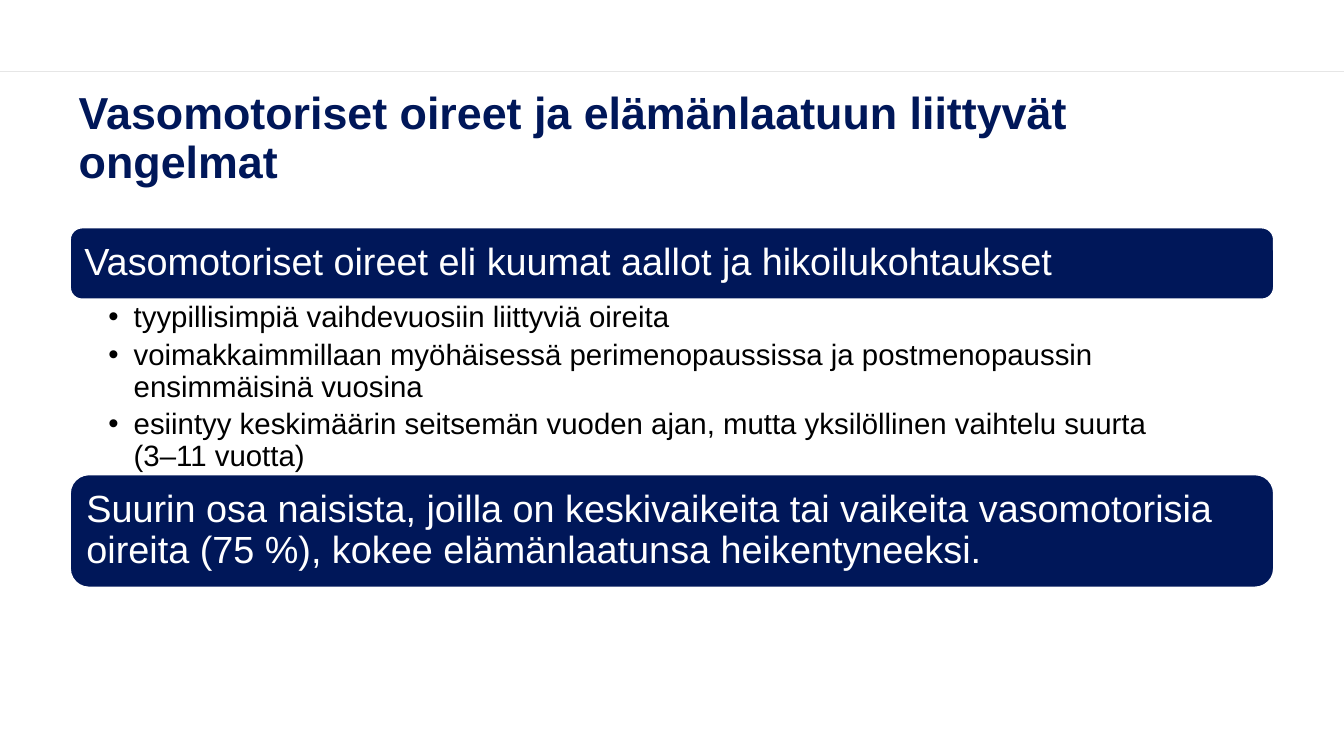
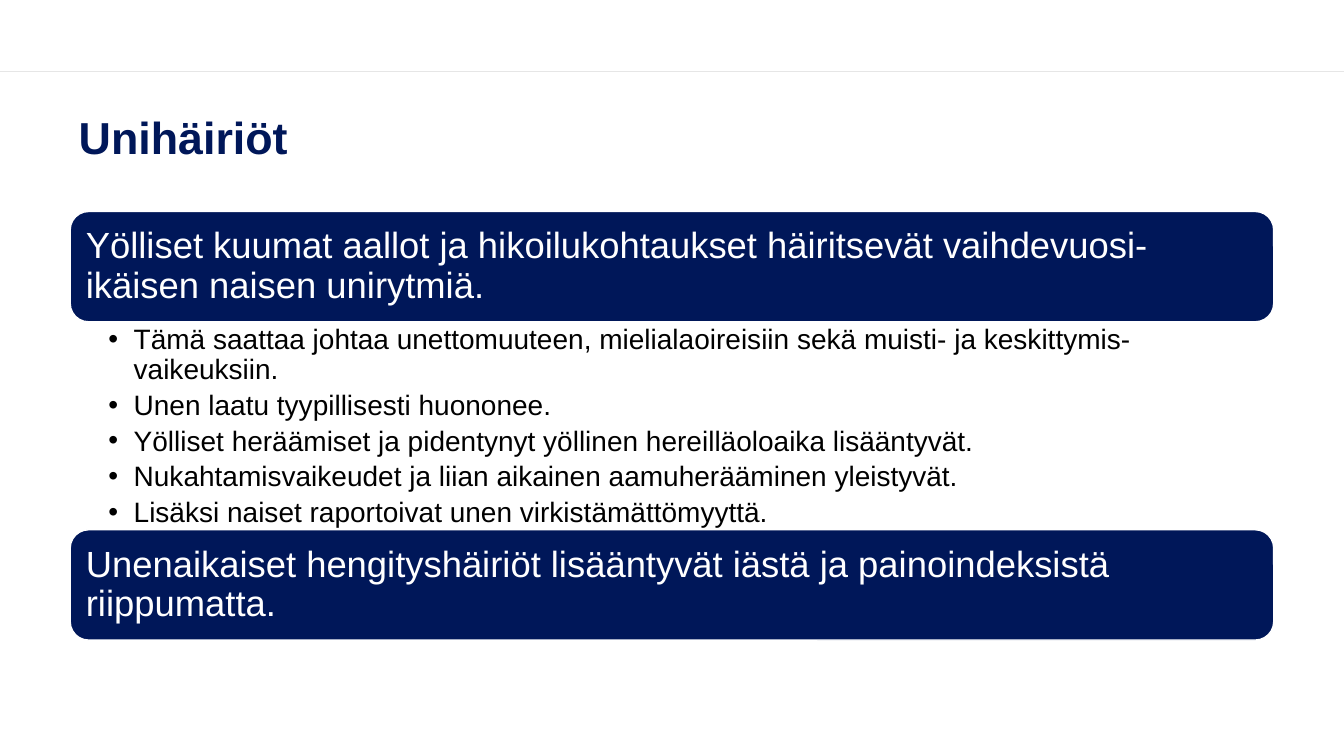
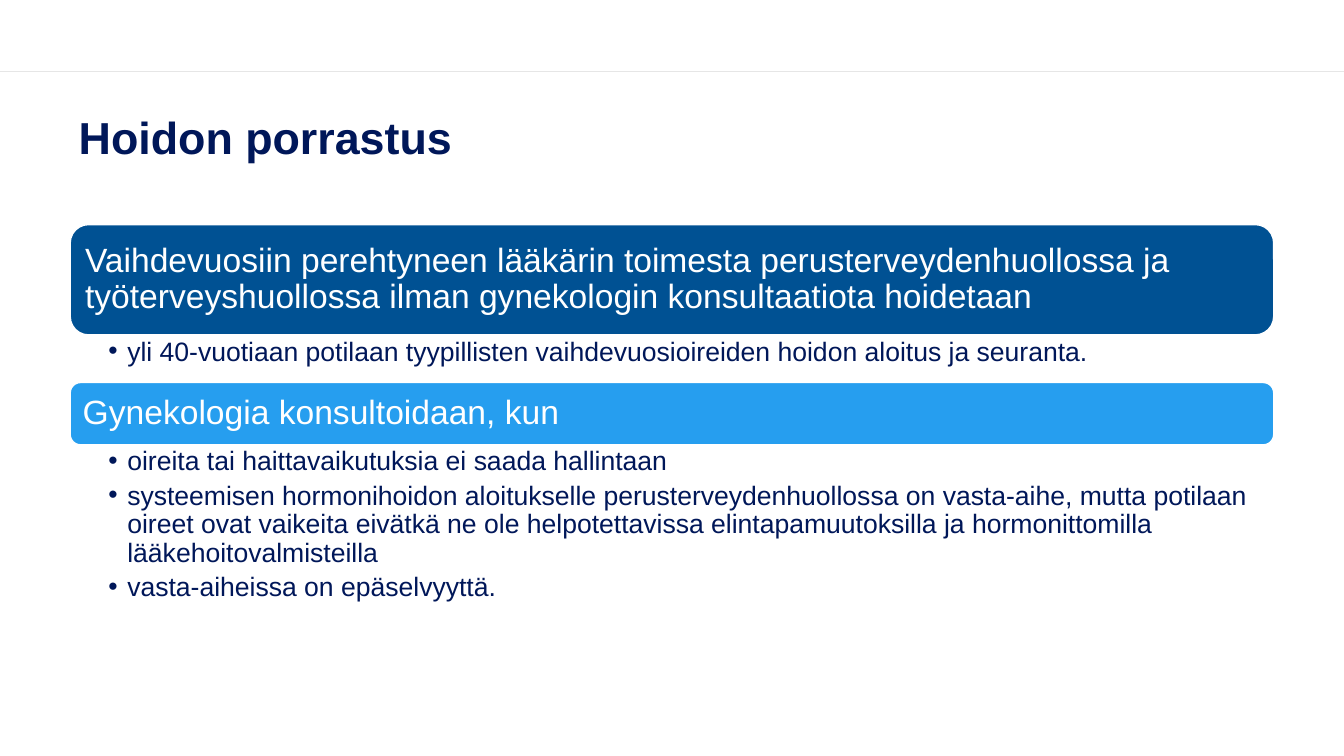
from dataclasses import dataclass

from lxml.etree import SubElement
from pptx import Presentation
from pptx.dml.color import RGBColor as RGB
from pptx.enum.shapes import MSO_CONNECTOR as LINE, MSO_SHAPE as SHAPE
from pptx.enum.text import MSO_ANCHOR as ANCHOR, MSO_AUTO_SIZE as FIT, PP_ALIGN as ALIGN
from pptx.oxml.ns import qn
from pptx.util import Cm, Pt


@dataclass(frozen=True)
class Theme:
    font: str = "Arial"
    title: int = 32
    navy: str = "001759"
    blue: str = "005193"
    sky: str = "269EEF"
    white: str = "FFFFFF"
    black: str = "000000"
    grey: str = "E6E6E6"
    leading: float = 0.9
    gap: float = 0.2  # space after a bullet, as a share of its type size


T = Theme()
WIDE, HIGH = 33.87, 19.05
LEFT, WIDTH = 1.77, 30.33
RULE = 1.8

# A part is (height, bar colour, text) for a bar and (height, list) for bullets.
SLIDES = [
    {
        "title": "Vasomotoriset oireet ja elämänlaatuun liittyvät ongelmat",
        "top": 5.74, "bar": 27, "item": 21, "ink": T.black, "indent": 0.64,
        "parts": [
            (1.8, T.navy, "Vasomotoriset oireet eli kuumat aallot ja hikoilukohtaukset"),
            (4.42, [
                "tyypillisimpiä vaihdevuosiin liittyviä oireita",
                "voimakkaimmillaan myöhäisessä perimenopaussissa ja postmenopaussin "
                "ensimmäisinä vuosina",
                "esiintyy keskimäärin seitsemän vuoden ajan, mutta yksilöllinen vaihtelu "
                "suurta\n(3–11 vuotta)",
            ]),
            (2.84, T.navy, "Suurin osa naisista, joilla on keskivaikeita tai vaikeita "
                           "vasomotorisia oireita (75 %), kokee elämänlaatunsa "
                           "heikentyneeksi."),
        ],
    },
    {
        "title": "Unihäiriöt",
        "top": 5.33, "bar": 26, "item": 20, "ink": T.black, "indent": 0.64,
        "parts": [
            (2.78, T.navy, "Yölliset kuumat aallot ja hikoilukohtaukset häiritsevät "
                           "vaihdevuosi-ikäisen naisen unirytmiä."),
            (5.24, [
                "Tämä saattaa johtaa unettomuuteen, mielialaoireisiin sekä muisti- ja "
                "keskittymis-vaikeuksiin.",
                "Unen laatu tyypillisesti huononee.",
                "Yölliset heräämiset ja pidentynyt yöllinen hereilläoloaika lisääntyvät.",
                "Nukahtamisvaikeudet ja liian aikainen aamuherääminen yleistyvät.",
                "Lisäksi naiset raportoivat unen virkistämättömyyttä.",
            ]),
            (2.78, T.navy, "Unenaikaiset hengityshäiriöt lisääntyvät iästä ja "
                           "painoindeksistä riippumatta."),
        ],
    },
    {
        "title": "Hoidon porrastus",
        "top": 5.66, "bar": 24, "item": 19, "ink": T.navy, "indent": 0.48,
        "parts": [
            (2.78, T.blue, "Vaihdevuosiin perehtyneen lääkärin toimesta "
                           "perusterveydenhuollossa ja työterveyshuollossa ilman "
                           "gynekologin konsultaatiota hoidetaan"),
            (1.2, [
                "yli 40-vuotiaan potilaan tyypillisten vaihdevuosioireiden hoidon "
                "aloitus ja seuranta.",
            ]),
            (1.57, T.sky, "Gynekologia konsultoidaan, kun"),
            (4.19, [
                "oireita tai haittavaikutuksia ei saada hallintaan",
                "systeemisen hormonihoidon aloitukselle perusterveydenhuollossa on "
                "vasta-aihe, mutta potilaan oireet ovat vaikeita eivätkä ne ole "
                "helpotettavissa elintapamuutoksilla ja hormonittomilla "
                "lääkehoitovalmisteilla",
                "vasta-aiheissa on epäselvyyttä.",
            ]),
        ],
    },
]


def style(par, size, color, bold=False):
    par.alignment = ALIGN.LEFT
    par.line_spacing = T.leading
    for part in (par, *par.runs):
        font = part.font
        font.name, font.size, font.bold = T.font, Pt(size), bold
        font.color.rgb = RGB.from_string(color)


def inset(frame, left, top, right, bottom):
    frame.word_wrap = True
    frame.margin_left, frame.margin_top = Cm(left), Cm(top)
    frame.margin_right, frame.margin_bottom = Cm(right), Cm(bottom)


def add_rule(slide):
    rule = slide.shapes.add_connector(LINE.STRAIGHT, 0, Cm(RULE), Cm(WIDE), Cm(RULE))
    rule.line.color.rgb = RGB.from_string(T.grey)
    rule.line.width = Pt(1)
    SubElement(rule.element.spPr, qn("a:effectLst"))


def set_title(slide, text):
    title = slide.shapes.title
    title.left, title.top = Cm(1.73), Cm(2.36)
    title.width, title.height = Cm(WIDTH), Cm(2.31)
    frame = title.text_frame
    frame.text = text
    frame.auto_size = FIT.NONE
    frame.vertical_anchor = ANCHOR.MIDDLE
    style(frame.paragraphs[0], T.title, T.navy, bold=True)


def add_bar(slide, box, color, text, size):
    bar = slide.shapes.add_shape(SHAPE.ROUNDED_RECTANGLE, *box)
    bar.shadow.inherit = False
    bar.fill.solid()
    bar.fill.fore_color.rgb = RGB.from_string(color)
    bar.line.color.rgb = RGB.from_string(T.white)
    bar.line.width = Pt(1)
    frame = bar.text_frame
    frame.text = text
    frame.vertical_anchor = ANCHOR.MIDDLE
    pad = size / 100
    inset(frame, pad, pad, pad, pad)
    style(frame.paragraphs[0], size, T.white)


def add_list(slide, box, items, size, color, indent):
    frame = slide.shapes.add_textbox(*box).text_frame
    inset(frame, 0.96, 0.08, 0.48, 0.08)
    for i, item in enumerate(items):
        par = frame.add_paragraph() if i else frame.paragraphs[0]
        par.text = item
        props = par._p.get_or_add_pPr()
        props.set("marL", str(Cm(indent)))
        props.set("indent", str(-Cm(indent)))
        SubElement(props, qn("a:buFont"), typeface=T.font)
        SubElement(props, qn("a:buChar"), char="•")
        par.space_after = Pt(round(size * T.gap, 1))
        style(par, size, color)


def build(deck, data):
    slide = deck.slides.add_slide(deck.slide_layouts[5])
    add_rule(slide)
    set_title(slide, data["title"])
    top = data["top"]
    for high, *part in data["parts"]:
        box = Cm(LEFT), Cm(top), Cm(WIDTH), Cm(high)
        if len(part) == 2:
            add_bar(slide, box, *part, data["bar"])
        else:
            add_list(slide, box, *part, data["item"], data["ink"], data["indent"])
        top += high


def main():
    deck = Presentation()
    deck.slide_width, deck.slide_height = Cm(WIDE), Cm(HIGH)
    for data in SLIDES:
        build(deck, data)
    deck.save("out.pptx")


if __name__ == "__main__":
    main()
